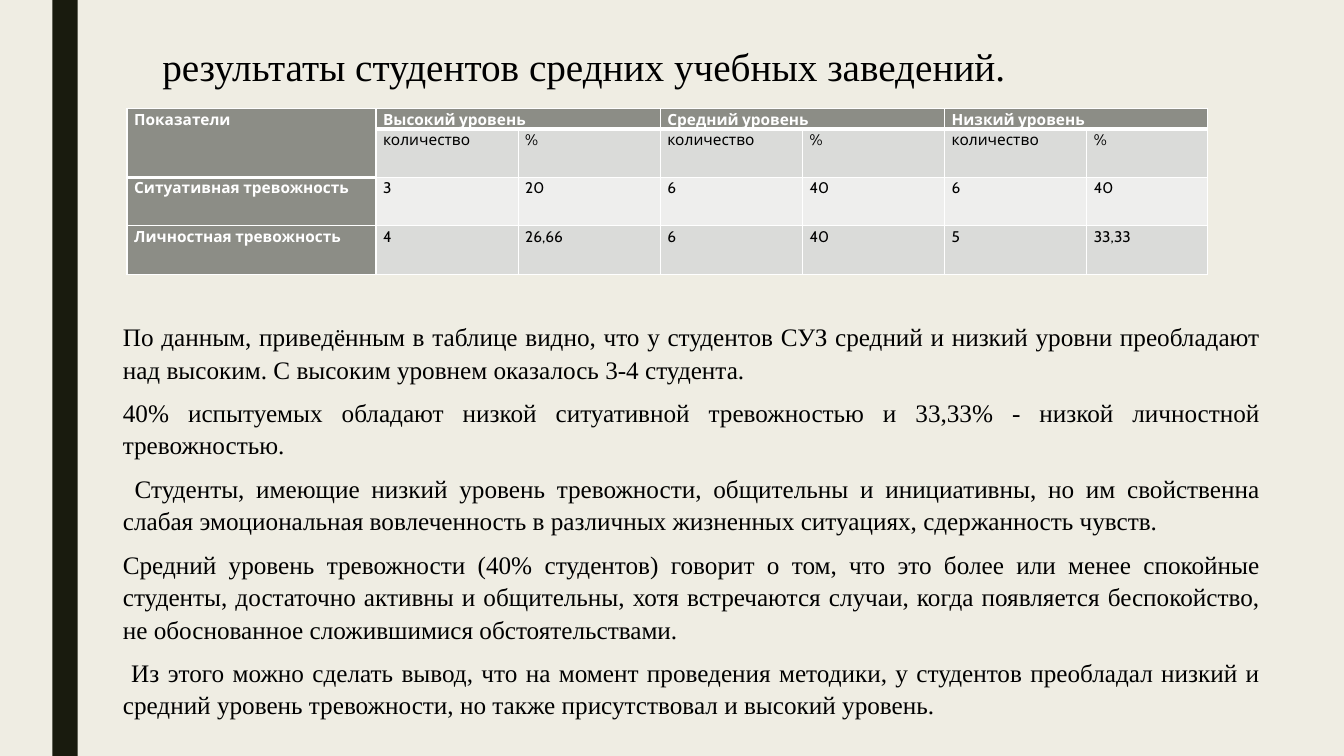
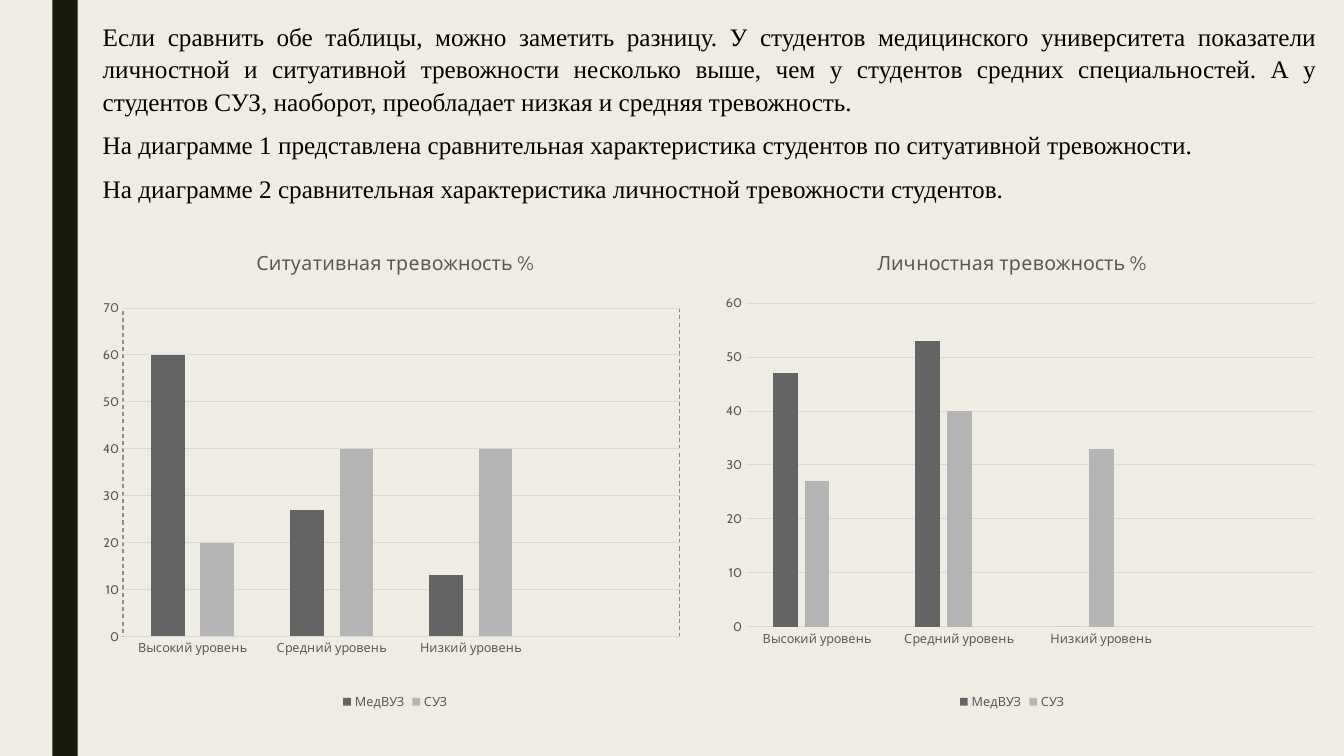
from dataclasses import dataclass
from typing import Optional

from pptx import Presentation
from pptx.chart.data import CategoryChartData
from pptx.dml.color import RGBColor
from pptx.enum.chart import XL_CHART_TYPE, XL_LEGEND_POSITION, XL_TICK_MARK
from pptx.enum.shapes import MSO_SHAPE
from pptx.enum.text import MSO_ANCHOR, MSO_AUTO_SIZE, PP_ALIGN
from pptx.oxml import parse_xml
from pptx.oxml.ns import nsdecls
from pptx.slide import Slide
from pptx.table import _Cell
from pptx.text.text import Font, TextFrame, _Paragraph
from pptx.util import Inches, Pt

# Shared style
PAPER = RGBColor(0xEF, 0xED, 0xE3)
BAND = RGBColor(0x19, 0x1B, 0x0E)
BLACK = RGBColor(0x00, 0x00, 0x00)
WHITE = RGBColor(0xFF, 0xFF, 0xFF)
HEADER = RGBColor(0x8C, 0x8D, 0x86)
ROW_DARK = RGBColor(0xDA, 0xDB, 0xD9)
ROW_LIGHT = RGBColor(0xEE, 0xEE, 0xED)
CHART_TEXT = RGBColor(0x59, 0x59, 0x59)
CHART_LINE = RGBColor(0xD9, 0xD9, 0xD9)
SERIES_COLORS = (RGBColor(0x64, 0x64, 0x64), RGBColor(0xB4, 0xB4, 0xB4), HEADER)
SERIF = "Times New Roman"
SANS = "Cabin"
LINE_SPACING = 1.07
TITLE_ONLY, BLANK = 5, 6


@dataclass(frozen=True)
class Frame:
    left: float
    top: float
    width: float
    height: float

    def lengths(self) -> tuple:
        return tuple(map(Inches, (self.left, self.top, self.width, self.height)))


@dataclass(frozen=True)
class Series:
    name: str
    values: tuple


@dataclass(frozen=True)
class ColumnChart:
    title: str
    frame: Frame
    plot: Frame  # fractions of the chart area
    maximum: int
    gap: int
    overlap: int
    series: tuple
    hidden_entry: Optional[int] = None
    dashed_border: bool = False


UNIVERSITY, COLLEGE = "МедВУЗ", "СУЗ"
LEVELS = ("Высокий уровень", "Средний уровень", "Низкий уровень")
TITLE = "результаты студентов средних учебных заведений."
COLUMN_WIDTHS = (2.47,) + (1.41,) * 5 + (1.2,)
ROW_HEIGHTS = (0.19, 0.48, 0.48, 0.48)
TABLE_ROWS = (
    ("Показатели", LEVELS[0], "", LEVELS[1], "", LEVELS[2], ""),
    ("",) + ("количество", "%") * 3,
    ("Ситуативная тревожность", "3", "20", "6", "40", "6", "40"),
    ("Личностная тревожность", "4", "26,66", "6", "40", "5", "33,33"),
)
FINDINGS = (
    "По данным, приведённым в таблице видно, что у студентов СУЗ средний и низкий уровни "
    "преобладают над высоким. С высоким уровнем оказалось 3-4 студента.",
    "40% испытуемых обладают низкой ситуативной тревожностью и 33,33% - низкой личностной "
    "тревожностью.",
    " Студенты, имеющие низкий уровень тревожности, общительны и инициативны, но им "
    "свойственна слабая эмоциональная вовлеченность в различных жизненных ситуациях, "
    "сдержанность чувств.",
    "Средний уровень тревожности (40% студентов) говорит о том, что это более или менее "
    "спокойные студенты, достаточно активны и общительны, хотя встречаются случаи, когда "
    "появляется беспокойство, не обоснованное сложившимися обстоятельствами.",
    " Из этого можно сделать вывод, что на момент проведения методики, у студентов "
    "преобладал низкий и средний уровень тревожности, но также присутствовал и высокий "
    "уровень.",
)
COMPARISON = (
    "Если сравнить обе таблицы, можно заметить разницу. У студентов медицинского "
    "университета показатели личностной и ситуативной тревожности несколько выше, чем у "
    "студентов средних специальностей. А у студентов СУЗ, наоборот, преобладает низкая и "
    "средняя тревожность.",
    "На диаграмме 1 представлена сравнительная характеристика студентов по ситуативной "
    "тревожности.",
    "На диаграмме 2 сравнительная характеристика личностной тревожности студентов.",
)
CHARTS = (
    ColumnChart(
        "Ситуативная тревожность %", Frame(0.92, 2.29, 6, 4.79),
        Frame(0.05, 0.16, 0.92, 0.68), 70, 169, -47,
        (Series(UNIVERSITY, (60, 27, 13, None)), Series(COLLEGE, (20, 40, 40, None))),
        dashed_border=True,
    ),
    ColumnChart(
        "Личностная тревожность %", Frame(7.04, 2.29, 6, 4.79),
        Frame(0.06, 0.15, 0.94, 0.67), 60, 219, -27,
        (Series(UNIVERSITY, (47, 53, 0, None)), Series(COLLEGE, (27, 40, 33, None)),
         Series("Series 3", (None,) * 4)),
        hidden_entry=2,
    ),
)


def style_font(font: Font, name: str, size: float, color: RGBColor, bold: bool = False) -> None:
    font.name, font.size, font.bold = name, Pt(size), bold
    font.color.rgb = color


def write_paragraph(para: _Paragraph, text: str, name: str, size: float,
                    color: RGBColor = BLACK, bold: bool = False, after: float = 0) -> None:
    para.alignment = PP_ALIGN.JUSTIFY
    para.line_spacing = LINE_SPACING
    para.space_before, para.space_after = Pt(0), Pt(after)
    span = para.add_run()
    span.text = text
    style_font(span.font, name, size, color, bold)


def fill_text(frame: TextFrame, texts: tuple, size: float) -> None:
    frame.word_wrap = True
    frame.auto_size = MSO_AUTO_SIZE.NONE
    frame.vertical_anchor = MSO_ANCHOR.TOP
    for index, text in enumerate(texts):
        para = frame.add_paragraph() if index else frame.paragraphs[0]
        write_paragraph(para, text, SERIF, size, after=8)


def add_body(page: Slide, frame: Frame, texts: tuple) -> None:
    box = page.shapes.add_textbox(*frame.lengths())
    fill_text(box.text_frame, texts, 18)


def add_title(page: Slide, frame: Frame, text: str) -> None:
    title = page.shapes.title
    title.left, title.top, title.width, title.height = frame.lengths()
    fill_text(title.text_frame, (text,), 28)


def style_master(deck: Presentation, page: Slide) -> None:
    """Give every slide the paper background and the vertical band."""
    master = deck.slide_master
    master.background.fill.solid()
    master.background.fill.fore_color.rgb = PAPER
    band = page.shapes.add_shape(MSO_SHAPE.RECTANGLE, *Frame(0.52, 0, 0.25, 7.5).lengths())
    band.shadow.inherit = False
    band.fill.solid()
    band.fill.fore_color.rgb = BAND
    band.line.fill.background()
    master.shapes.element.append(band.element)


def style_cell(cell: _Cell, fill: RGBColor, bottom: float) -> None:
    cell.margin_left = cell.margin_right = Inches(0.07)
    cell.margin_top = cell.margin_bottom = 0
    properties = cell._tc.get_or_add_tcPr()
    for side, width in (("L", 1), ("R", 1), ("T", 1), ("B", bottom)):
        properties.append(parse_xml(
            f'<a:ln{side} {nsdecls("a")} w="{Pt(width)}"><a:solidFill>'
            f'<a:srgbClr val="{WHITE}"/></a:solidFill></a:ln{side}>'))
    cell.fill.solid()
    cell.fill.fore_color.rgb = fill


def add_results_table(page: Slide, left: float, top: float) -> None:
    frame = Frame(left, top, sum(COLUMN_WIDTHS), sum(ROW_HEIGHTS))
    table = page.shapes.add_table(
        len(ROW_HEIGHTS), len(COLUMN_WIDTHS), *frame.lengths()).table
    for column, width in zip(table.columns, COLUMN_WIDTHS):
        column.width = Inches(width)
    for row, height in zip(table.rows, ROW_HEIGHTS):
        row.height = Inches(height)

    # Merged headings
    table.cell(0, 0).merge(table.cell(1, 0))
    for column in (1, 3, 5):
        table.cell(0, column).merge(table.cell(0, column + 1))

    for row, texts in enumerate(TABLE_ROWS):
        for column, text in enumerate(texts):
            cell = table.cell(row, column)
            heading = row == 0 or column == 0
            fill = HEADER if heading else ROW_DARK if row % 2 else ROW_LIGHT
            style_cell(cell, fill, 3 if row == 0 or (row, column) == (1, 0) else 1)
            if text:
                write_paragraph(cell.text_frame.paragraphs[0], text, SANS, 11,
                                WHITE if heading else BLACK, heading)


def add_column_chart(page: Slide, item: ColumnChart) -> None:
    data = CategoryChartData()
    data.categories = LEVELS + ("",)
    for series in item.series:
        data.add_series(series.name, series.values)
    chart = page.shapes.add_chart(
        XL_CHART_TYPE.COLUMN_CLUSTERED, *item.frame.lengths(), data).chart
    style_font(chart.font, SANS, 10, BLACK)

    # Title and legend
    chart.has_title = True
    span = chart.chart_title.text_frame.paragraphs[0].add_run()
    span.text = item.title
    style_font(span.font, SANS, 14, CHART_TEXT)
    chart.chart_title.include_in_layout = False
    chart.has_legend = True
    legend = chart.legend
    legend.position = XL_LEGEND_POSITION.BOTTOM
    legend.include_in_layout = False
    style_font(legend.font, SANS, 9, CHART_TEXT)
    if item.hidden_entry is not None:
        legend._element.insert(1, parse_xml(
            f'<c:legendEntry {nsdecls("c")}><c:idx val="{item.hidden_entry}"/>'
            '<c:delete val="1"/></c:legendEntry>'))

    # Axes
    for axis in (chart.category_axis, chart.value_axis):
        axis.major_tick_mark = axis.minor_tick_mark = XL_TICK_MARK.NONE
        style_font(axis.tick_labels.font, SANS, 9, CHART_TEXT)
    values = chart.value_axis
    values.minimum_scale, values.maximum_scale, values.major_unit = 0, item.maximum, 10
    values.format.line.fill.background()
    for line in (chart.category_axis.format.line, values.major_gridlines.format.line):
        line.color.rgb = CHART_LINE
        line.width = Pt(0.75)

    # Columns
    plot = chart.plots[0]
    plot.vary_by_categories = False
    plot.gap_width, plot.overlap = item.gap, item.overlap
    for series, color in zip(plot.series, SERIES_COLORS):
        series.format.fill.solid()
        series.format.fill.fore_color.rgb = color

    # Inner plot position and border
    area = chart._chartSpace.chart.plotArea
    for layout in area.findall("{*}layout"):
        area.remove(layout)
    places = (("x", item.plot.left), ("y", item.plot.top),
              ("w", item.plot.width), ("h", item.plot.height))
    modes = "".join(f'<c:{key}Mode val="edge"/>' for key in "xy")
    sizes = "".join(f'<c:{key} val="{value}"/>' for key, value in places)
    area.insert(0, parse_xml(
        f'<c:layout {nsdecls("c")}><c:manualLayout><c:layoutTarget val="inner"/>'
        f'{modes}{sizes}</c:manualLayout></c:layout>'))
    if item.dashed_border:
        area.append(parse_xml(
            f'<c:spPr {nsdecls("c", "a")}><a:noFill/><a:ln w="{Pt(0.75)}"><a:solidFill>'
            f'<a:srgbClr val="{HEADER}"/></a:solidFill><a:prstDash val="dash"/></a:ln></c:spPr>'))


def main() -> None:
    deck = Presentation()
    deck.slide_width, deck.slide_height = Inches(13.33), Inches(7.5)

    # Results table and findings
    page = deck.slides.add_slide(deck.slide_layouts[TITLE_ONLY])
    style_master(deck, page)
    add_title(page, Frame(1.51, 0.34, 9.52, 0.58), TITLE)
    add_results_table(page, 1.26, 1.08)
    add_body(page, Frame(1.12, 3.12, 11.48, 4.11), FINDINGS)

    # Comparison of the two groups
    page = deck.slides.add_slide(deck.slide_layouts[BLANK])
    add_body(page, Frame(0.92, 0.14, 12.24, 1.95), COMPARISON)
    for item in CHARTS:
        add_column_chart(page, item)

    deck.save("out.pptx")


if __name__ == "__main__":
    main()
